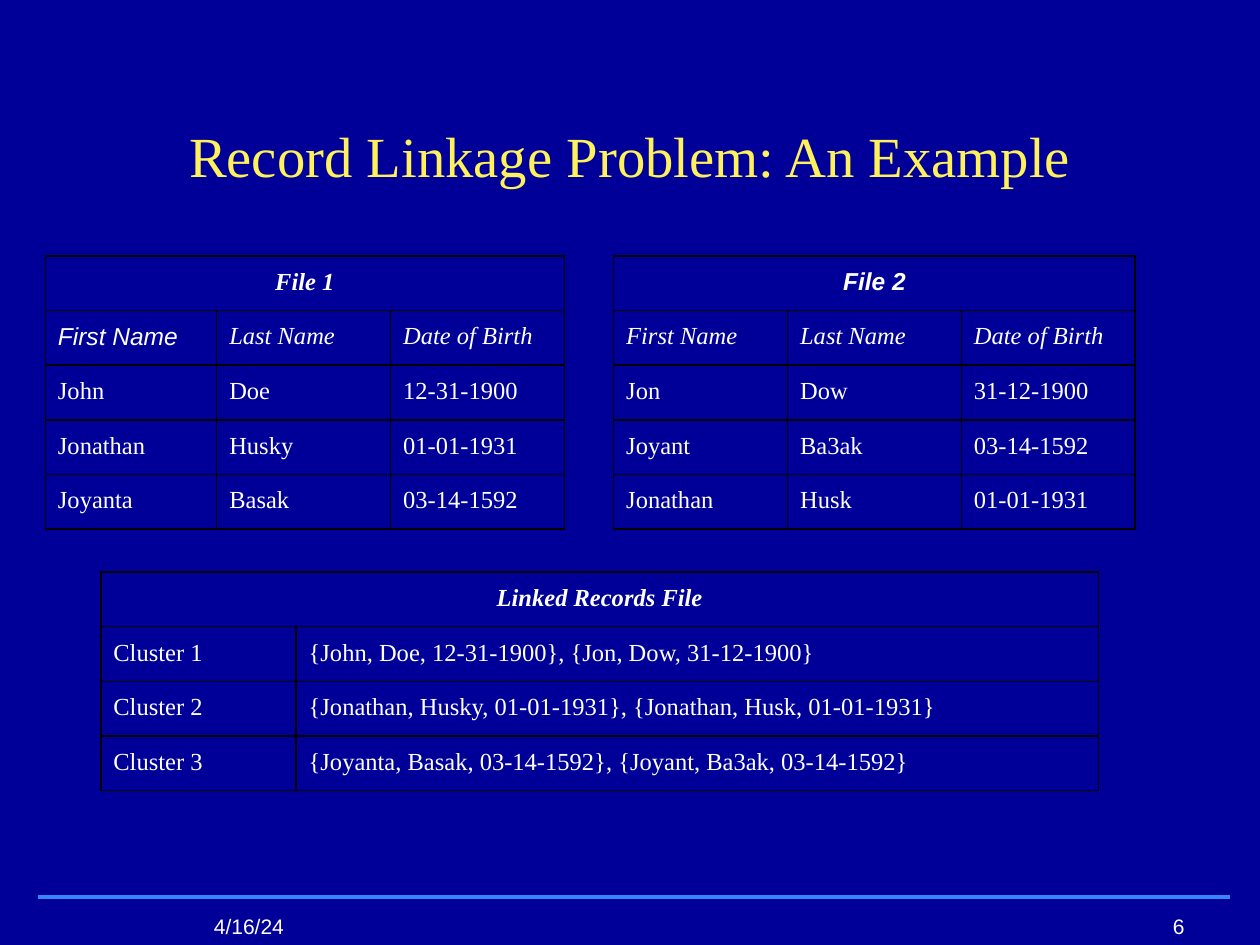
from lxml.etree import SubElement as Sub
from pptx import Presentation
from pptx.dml.color import RGBColor as RGB
from pptx.enum.shapes import MSO_CONNECTOR as CONN
from pptx.enum.text import MSO_ANCHOR as ANCHOR, MSO_AUTO_SIZE as FIT, PP_ALIGN as ALIGN
from pptx.oxml import parse_xml
from pptx.oxml.ns import nsdecls, qn
from pptx.util import Inches, Pt

NAVY = RGB(0x00, 0x00, 0x99)
BLUE = RGB(0x35, 0x87, 0xF5)
YELLOW = RGB(0xFF, 0xF1, 0x5B)
WHITE = RGB(0xFF, 0xFF, 0xFF)
BLACK = RGB(0x00, 0x00, 0x00)
SERIF, SANS = "Times New Roman", "Arial"
ROW = 0.42


class Deck:
    """Holds the style and the current slide."""

    def __init__(self):
        self.prs = Presentation()
        self.prs.slide_width, self.prs.slide_height = Inches(10), Inches(7.5)
        self.slide = self.prs.slides.add_slide(self.prs.slide_layouts[5])
        fill = self.slide.background.fill
        fill.solid()
        fill.fore_color.rgb = NAVY

    def style(self, para, size, face=SERIF, color=WHITE, bold=False, italic=False):
        font = para.font
        font.size, font.name = Pt(size), face
        font.bold, font.italic = bold, italic
        font.color.rgb = color

    def title(self, text, x, y, w, h):
        box = self.slide.shapes.title
        box.left, box.top, box.width, box.height = map(Inches, (x, y, w, h))
        frame = box.text_frame
        frame.text = text
        frame.word_wrap, frame.auto_size = True, FIT.NONE
        frame.vertical_anchor = ANCHOR.TOP
        frame.margin_top = Inches(0.17)
        para = frame.paragraphs[0]
        para.alignment = ALIGN.CENTER
        self.style(para, 32.4, color=YELLOW)

    def rule(self, x1, x2, y):
        line = self.slide.shapes.add_connector(
            CONN.STRAIGHT, Inches(x1), Inches(y), Inches(x2), Inches(y))
        line.line.color.rgb, line.line.width = BLUE, Pt(2.25)
        Sub(line._element.spPr, qn("a:effectLst"))

    def note(self, text, x, y, w, h):
        box = self.slide.shapes.add_textbox(*map(Inches, (x, y, w, h)))
        frame = box.text_frame
        frame.text, frame.word_wrap = text, False
        self.style(frame.paragraphs[0], 12, SANS)

    def border(self, cell):
        props = cell._tc.get_or_add_tcPr()
        for i, side in enumerate("LRTB"):
            props.insert(i, parse_xml(
                f'<a:ln{side} {nsdecls("a")} w="12700"><a:solidFill>'
                f'<a:srgbClr val="{BLACK}"/></a:solidFill></a:ln{side}>'))

    def table(self, x, y, cols, head, rows, labels=False, sans=()):
        """Draw a headed table; labels makes the first row italic."""
        grid = [[head] + [""] * (len(cols) - 1)] + rows
        table = self.slide.shapes.add_table(
            len(grid), len(cols), Inches(x), Inches(y),
            Inches(sum(cols)), Inches(ROW * len(grid))).table
        table.first_row = table.horz_banding = False
        for col, width in zip(table.columns, cols):
            col.width = Inches(width)
        for r, texts in enumerate(grid):
            table.rows[r].height = Inches(ROW)
            for c, text in enumerate(texts):
                cell = table.cell(r, c)
                cell.text = text
                cell.margin_top = cell.margin_bottom = Inches(0.1)
                cell.margin_left = cell.margin_right = Inches(0.1)
                cell.fill.background()
                self.border(cell)
                self.style(cell.text_frame.paragraphs[0], 14,
                           SANS if (r, c) in sans else SERIF,
                           bold=r == 0, italic=r == 0 or (labels and r == 1))
        top = table.cell(0, 0)
        top.merge(table.cell(0, len(cols) - 1))
        top.text_frame.paragraphs[0].alignment = ALIGN.CENTER


def main():
    deck = Deck()

    # Footer
    deck.rule(0.3, 9.76, 7.12)
    deck.note("4/16/24", 1.6, 7.2, 0.94, 0.3)
    deck.note("6", 9.21, 7.2, 0.4, 0.3)

    deck.title("Record Linkage Problem: An Example", 0.34, 0.79, 9.32, 0.63)

    # Source files
    names = ["First Name", "Last Name", "Date of Birth"]
    deck.table(0.36, 2.03, [1.36, 1.38, 1.38], "File 1", [
        names,
        ["John", "Doe", "12-31-1900"],
        ["Jonathan", "Husky", "01-01-1931"],
        ["Joyanta", "Basak", "03-14-1592"],
    ], labels=True, sans=[(1, 0)])
    deck.table(4.87, 2.03, [1.38] * 3, "File 2", [
        names,
        ["Jon", "Dow", "31-12-1900"],
        ["Joyant", "Ba3ak", "03-14-1592"],
        ["Jonathan", "Husk", "01-01-1931"],
    ], labels=True, sans=[(0, 0)])

    # Linked result
    links = [
        "{John, Doe, 12-31-1900}, {Jon, Dow, 31-12-1900}",
        "{Jonathan, Husky, 01-01-1931}, {Jonathan, Husk, 01-01-1931}",
        "{Joyanta, Basak, 03-14-1592}, {Joyant, Ba3ak, 03-14-1592}",
    ]
    deck.table(0.8, 4.54, [1.55, 6.37], "Linked Records File",
               [[f"Cluster {i}", link] for i, link in enumerate(links, 1)])

    deck.prs.save("out.pptx")


if __name__ == "__main__":
    main()
